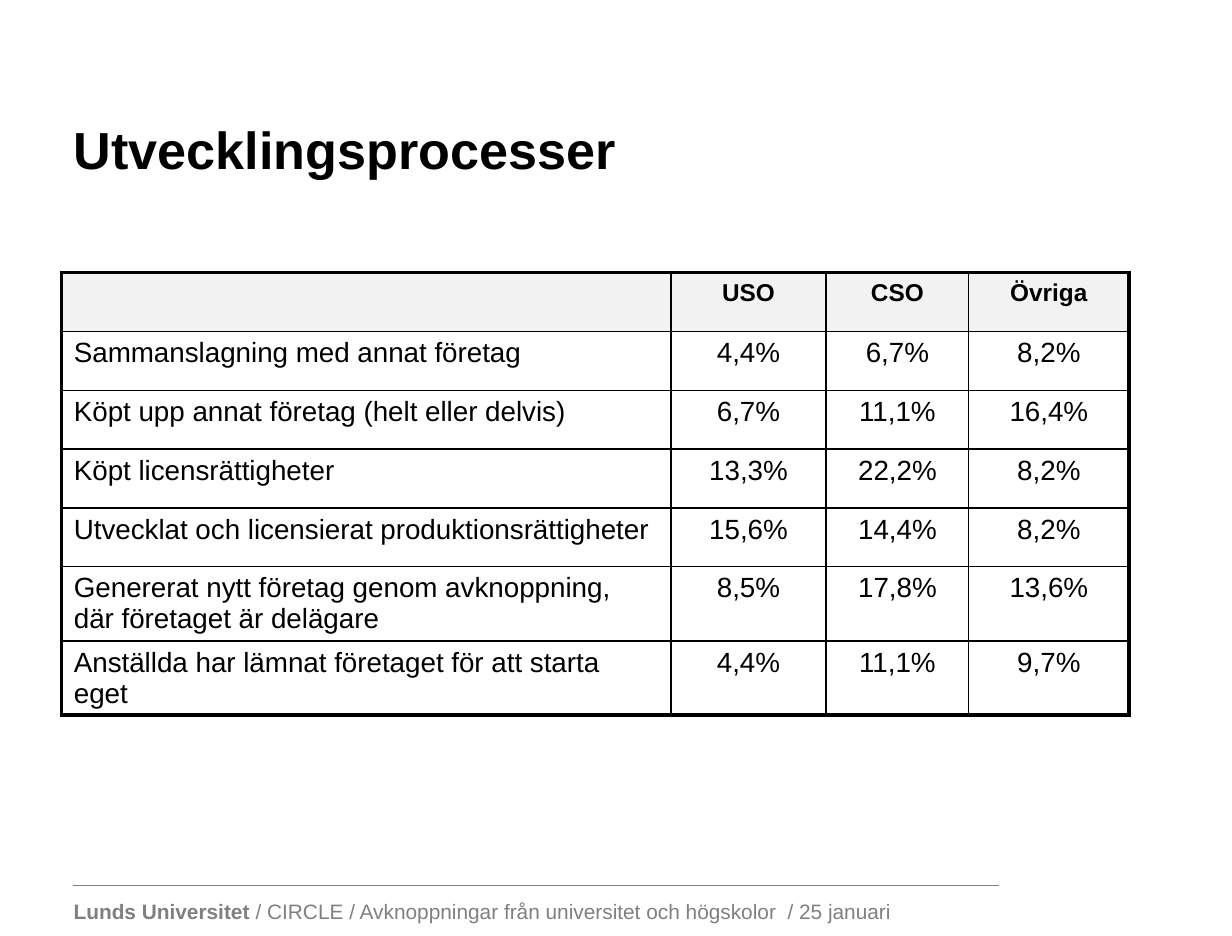
from lxml import etree
from pptx import Presentation
from pptx import util as u
from pptx.dml.color import RGBColor
from pptx.enum import shapes, text
from pptx.oxml.ns import qn

WIDTH_CM, HEIGHT_CM = 25, 19
LEFT = 0.49
FONT = "Arial"
COLORS = {"ink": "000000", "footer": "808080", "header": "F2F2F2"}
THIN, THICK = 1, 2.25

COLUMN_WIDTHS = [4.87, 1.24, 1.14, 1.28]
ROW_HEIGHT = 0.47
ROWS = [
    ["", "USO", "CSO", "Övriga"],
    ["Sammanslagning med annat företag", "4,4%", "6,7%", "8,2%"],
    ["Köpt upp annat företag (helt eller delvis)", "6,7%", "11,1%", "16,4%"],
    ["Köpt licensrättigheter", "13,3%", "22,2%", "8,2%"],
    ["Utvecklat och licensierat produktionsrättigheter", "15,6%", "14,4%", "8,2%"],
    ["Genererat nytt företag genom avknoppning, där företaget är delägare",
     "8,5%", "17,8%", "13,6%"],
    ["Anställda har lämnat företaget för att starta eget", "4,4%", "11,1%", "9,7%"],
]


def color(name):
    return RGBColor.from_string(COLORS[name])


def inches(*lengths):
    return [u.Inches(length) for length in lengths]


def style_font(font, size, bold, name="ink"):
    font.name, font.size, font.bold = FONT, u.Pt(size), bold
    font.color.rgb = color(name)


def add_title(page, box, words):
    title = page.shapes.title
    title.left, title.top, title.width, title.height = inches(*box)
    frame = title.text_frame
    frame.text = words
    frame.auto_size = text.MSO_AUTO_SIZE.NONE
    frame.vertical_anchor = text.MSO_ANCHOR.MIDDLE
    para = frame.paragraphs[0]
    para.alignment = text.PP_ALIGN.LEFT
    style_font(para.font, 30, True)


def set_borders(cell, widths):
    properties = cell._tc.get_or_add_tcPr()
    for side in "LRTB":
        line = etree.SubElement(properties, qn(f"a:ln{side}"), w=str(u.Pt(widths[side])))
        fill = etree.SubElement(line, qn("a:solidFill"))
        etree.SubElement(fill, qn("a:srgbClr"), val=COLORS["ink"])


def add_process_table(page, box):
    last_row, last_column = len(ROWS) - 1, len(COLUMN_WIDTHS) - 1
    table = page.shapes.add_table(len(ROWS), len(COLUMN_WIDTHS), *inches(*box)).table
    table.first_row = table.horz_banding = False
    for column, width in zip(table.columns, COLUMN_WIDTHS):
        column.width = u.Inches(width)

    for r, values in enumerate(ROWS):
        table.rows[r].height = u.Inches(ROW_HEIGHT)
        for c, value in enumerate(values):
            cell = table.cell(r, c)
            cell.margin_bottom = u.Inches(0.01)
            # Thick frame around the table, thin lines inside
            outer = {"L": c == 0, "R": c == last_column, "T": r == 0, "B": r == last_row}
            set_borders(cell, {side: THICK if edge else THIN for side, edge in outer.items()})
            if r == 0:
                cell.fill.solid()
                cell.fill.fore_color.rgb = color("header")
            else:
                cell.fill.background()
            if value:
                cell.text = value
                para = cell.text_frame.paragraphs[0]
                para.alignment = text.PP_ALIGN.CENTER if c else text.PP_ALIGN.LEFT
                style_font(para.font, 16 if r else 14, r == 0)


def add_footer(page, box):
    left, top, width, height = box
    # Rule above the footer text
    rule = page.shapes.add_connector(
        shapes.MSO_CONNECTOR.STRAIGHT,
        *inches(left + 0.09, top - 0.05, left + 7.49, top - 0.05))
    rule.line.color.rgb = color("footer")
    rule.line.width = u.Pt(0.5)
    etree.SubElement(rule._element.spPr, qn("a:effectLst"))

    # Sender in bold, then the occasion
    frame = page.shapes.add_textbox(*inches(left, top, width, height)).text_frame
    frame.word_wrap = False
    para = frame.paragraphs[0]
    style_font(para.font, 12, False, "footer")
    sender = para.add_run()
    sender.text = "Lunds Universitet"
    sender.font.bold = True
    para.add_run().text = " / CIRCLE / Avknoppningar från universitet och högskolor  / 25 januari"


def main():
    deck = Presentation()
    deck.slide_width, deck.slide_height = u.Cm(WIDTH_CM), u.Cm(HEIGHT_CM)
    page = deck.slides.add_slide(deck.slide_layouts.get_by_name("Title Only"))
    add_footer(page, (LEFT, 7.13, 6.74, 0.3))
    add_title(page, (LEFT, 0.56, 8.86, 1.25), "Utvecklingsprocesser")
    add_process_table(page, (LEFT, 2.18, sum(COLUMN_WIDTHS), ROW_HEIGHT * len(ROWS)))
    deck.save("out.pptx")


if __name__ == "__main__":
    main()
